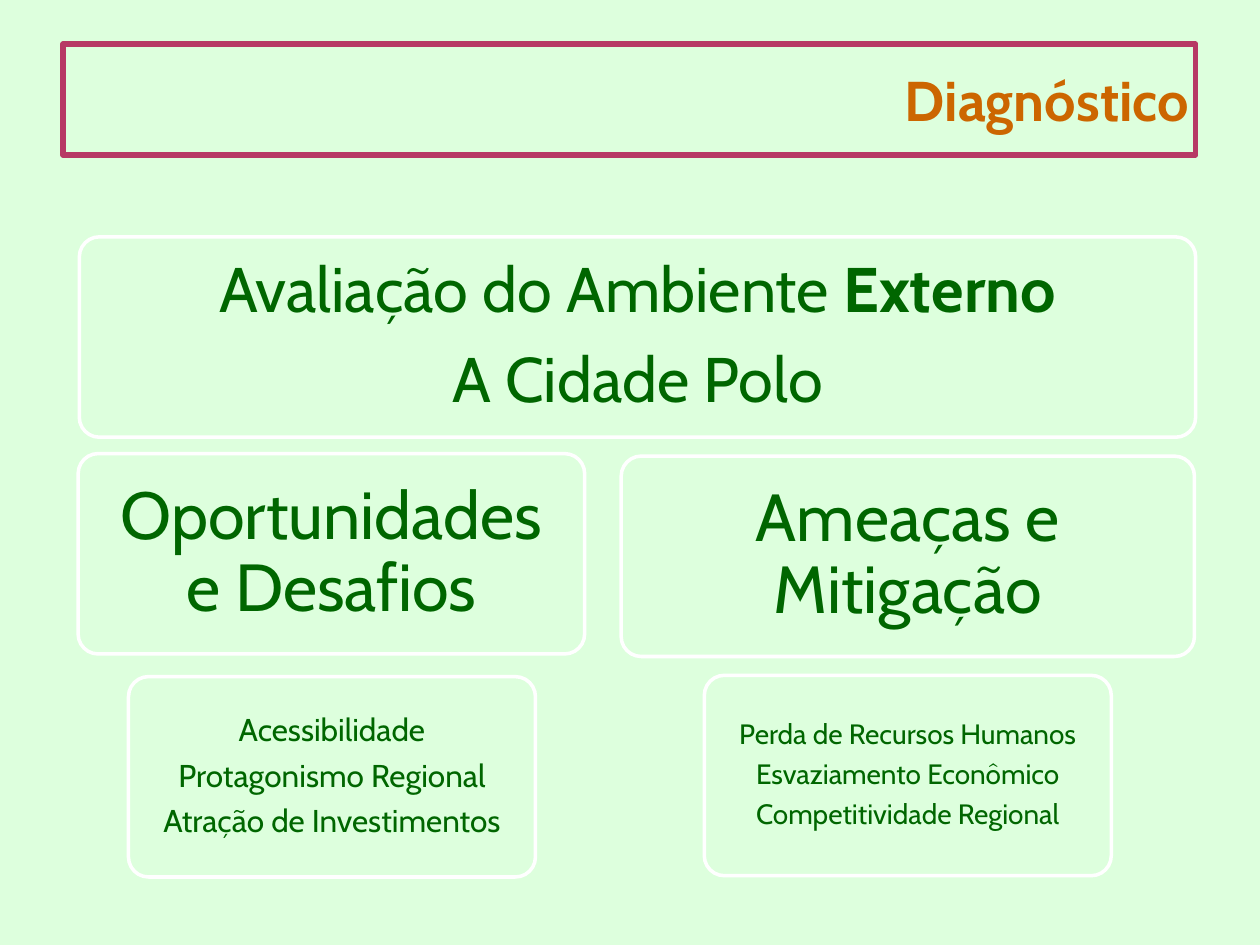
"""Build the external environment diagnosis slide."""
from pptx import Presentation
from pptx.dml.color import RGBColor
from pptx.enum.shapes import MSO_SHAPE as SHAPE
from pptx.enum.text import MSO_ANCHOR as ANCHOR, PP_ALIGN as ALIGN
from pptx.util import Inches, Pt

FONT = "Cabin"
MINT = RGBColor(0xDD, 0xFF, 0xDD)
WHITE = RGBColor(0xFF, 0xFF, 0xFF)
GREEN = RGBColor(0x00, 0x66, 0x00)
ORANGE = RGBColor(0xCC, 0x66, 0x00)
BERRY = RGBColor(0xB7, 0x39, 0x65)

TITLE = "Diagnóstico"
CARD_H = 1.59
# Each card: left, top, width, font size, inset, paragraphs of (text, bold) runs
CARDS = [
    (0.63, 1.88, 8.86, 36, 0.15,
     [[("Avaliação do Ambiente ", False), ("Externo", True)],
      [("A Cidade Polo", False)]]),
    (0.62, 3.6, 4.02, 38, 0.16, [[("Oportunidades e Desafios", False)]]),
    (1.02, 5.37, 3.23, 18, 0.07,
     [[("Acessibilidade", False)],
      [("Protagonismo Regional", False)],
      [("Atração de Investimentos", False)]]),
    (4.93, 3.62, 4.55, 38, 0.16, [[("Ameaças e Mitigação", False)]]),
    (5.59, 5.36, 3.23, 16, 0.07,
     [[("Perda de Recursos Humanos", False)],
      [("Esvaziamento Econômico", False)],
      [("Competitividade Regional", False)]]),
]


def add_box(s, kind, box, color, weight, insets):
    sp = s.shapes.add_shape(kind, *map(Inches, box))
    sp.shadow.inherit = False
    sp.fill.background()
    sp.line.color.rgb = color
    sp.line.width = Pt(weight)
    tf = sp.text_frame
    tf.word_wrap = True
    tf.vertical_anchor = ANCHOR.MIDDLE
    tf.margin_left = tf.margin_right = Inches(insets[0])
    tf.margin_top = tf.margin_bottom = Inches(insets[1])
    return sp


def set_font(p, size, color):
    p.font.name = FONT
    p.font.size = Pt(size)
    p.font.color.rgb = color


def add_title(s):
    sp = add_box(s, SHAPE.RECTANGLE, (0.5, 0.35, 8.99, 0.88), BERRY, 3, (0.05, 0))
    p = sp.text_frame.paragraphs[0]
    p.text = TITLE
    p.alignment = ALIGN.RIGHT
    set_font(p, 32, ORANGE)
    p.font.bold = True


def add_card(s, left, top, width, size, inset, paragraphs):
    sp = add_box(s, SHAPE.ROUNDED_RECTANGLE, (left, top, width, CARD_H),
                 WHITE, 2, (inset, inset))
    sp.adjustments[0] = 0.1
    tf = sp.text_frame
    for i, runs in enumerate(paragraphs):
        p = tf.add_paragraph() if i else tf.paragraphs[0]
        p.alignment = ALIGN.CENTER
        p.line_spacing = 0.9
        p.space_after = Pt(size * 0.35)
        set_font(p, size, GREEN)
        for text, bold in runs:
            r = p.add_run()
            r.text = text
            r.font.bold = bold


def main():
    prs = Presentation()
    prs.slide_width, prs.slide_height = Inches(10), Inches(7.5)
    s = prs.slides.add_slide(prs.slide_layouts[6])
    s.background.fill.solid()
    s.background.fill.fore_color.rgb = MINT
    add_title(s)
    for card in CARDS:
        add_card(s, *card)
    prs.save("out.pptx")


if __name__ == "__main__":
    main()
